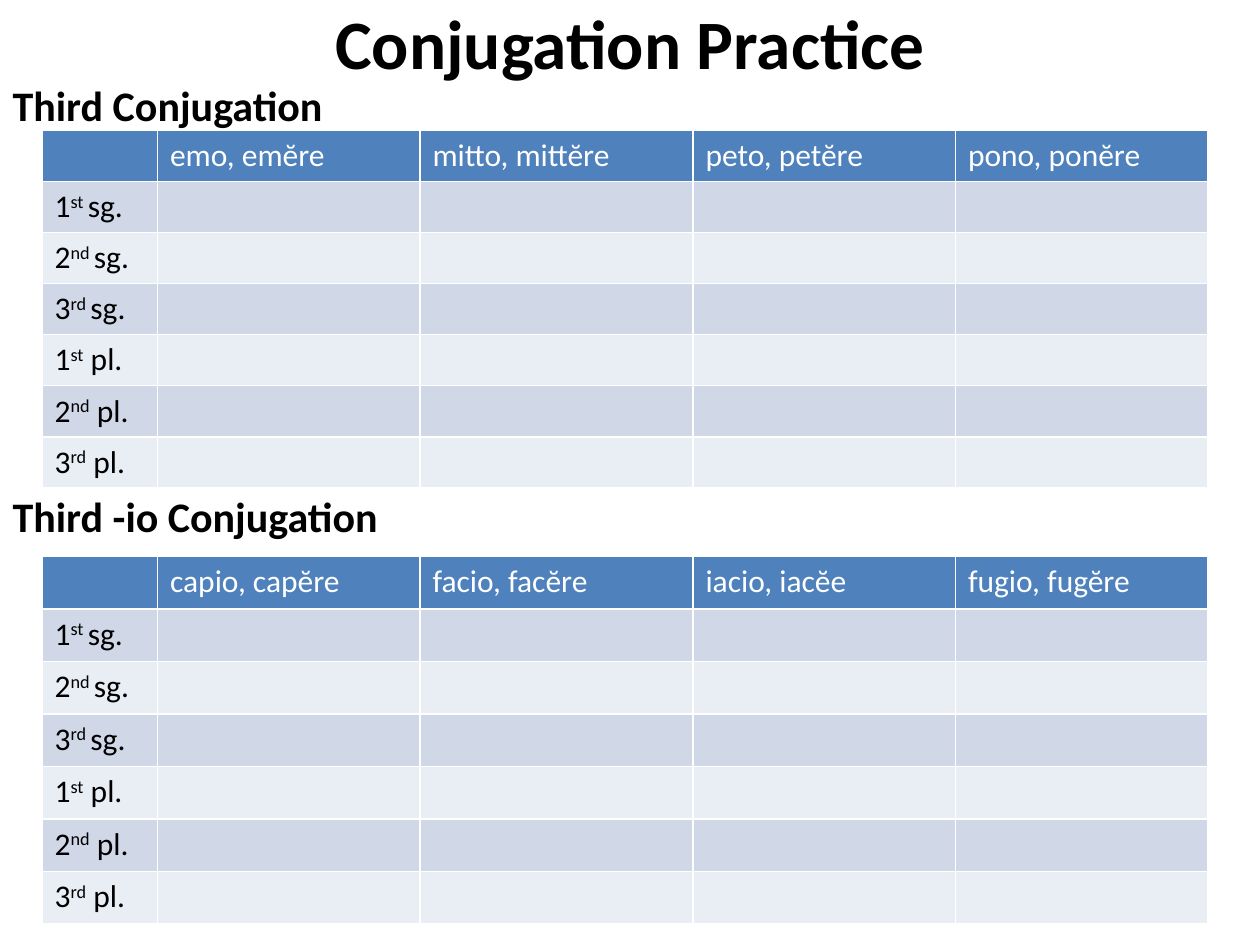
from lxml.etree import SubElement
from pptx import Presentation
from pptx.dml.color import RGBColor
from pptx.enum.text import MSO_ANCHOR, MSO_AUTO_SIZE, PP_ALIGN
from pptx.oxml.ns import qn
from pptx.util import Pt

PERSONS = [("1", "st ", "sg."), ("2", "nd ", "sg."), ("3", "rd ", "sg."),
           ("1", "st", " pl."), ("2", "nd", " pl."), ("3", "rd", " pl.")]
THIRD_VERBS = ["emo, emĕre", "mitto, mittĕre", "peto, petĕre", "pono, ponĕre"]
THIRD_IO_VERBS = ["capio, capĕre", "facio, facĕre", "iacio, iacĕe", "fugio, fugĕre"]
COLUMN_WIDTHS = [66, 150, 156, 150, 144]


def rgb(color):
    return RGBColor.from_string(color)


def add_text(paragraph, text, size=18, color="000000", bold=False, raised=False):
    run = paragraph.add_run()
    run.text = text
    run.font.name = "Calibri"
    run.font.size = Pt(size)
    run.font.bold = bold
    run.font.color.rgb = rgb(color)
    if raised:
        run._r.get_or_add_rPr().set("baseline", "30000")


class PracticeSlide:
    header_fill = "4F81BD"
    band_fills = ["D0D8E8", "E9EDF4"]
    line_color = "FFFFFF"

    def __init__(self, slide):
        self.slide = slide

    def place(self, placeholder, left, top, width, height):
        placeholder.left, placeholder.top = Pt(left), Pt(top)
        placeholder.width, placeholder.height = Pt(width), Pt(height)
        frame = placeholder.text_frame
        frame.word_wrap = True
        frame.auto_size = MSO_AUTO_SIZE.NONE
        return frame

    def title(self, text):
        frame = self.place(self.slide.shapes.title, 36, 0, 648, 48)
        frame.vertical_anchor = MSO_ANCHOR.MIDDLE
        heading = frame.paragraphs[0]
        heading.alignment = PP_ALIGN.CENTER
        add_text(heading, text, size=39.6, bold=True)

    def section_headings(self, headings, gap):
        """Stack the headings, leaving a gap between them for a table."""
        frame = self.place(self.slide.placeholders[1], 0, 42, 702, 498)
        for index, text in enumerate(headings):
            heading = frame.add_paragraph() if index else frame.paragraphs[0]
            heading.space_before = Pt(gap if index else 0)
            properties = heading._p.get_or_add_pPr()
            properties.set("marL", str(Pt(27)))
            properties.set("indent", str(Pt(-27)))
            SubElement(properties, qn("a:buNone"))
            add_text(heading, text, size=24, bold=True)

    def style_cell(self, cell, fill):
        properties = cell._tc.get_or_add_tcPr()
        for side in ("lnL", "lnR", "lnT", "lnB"):
            border = SubElement(properties, qn(f"a:{side}"), w=str(Pt(1)))
            line_fill = SubElement(border, qn("a:solidFill"))
            SubElement(line_fill, qn("a:srgbClr"), val=self.line_color)
        cell.fill.solid()
        cell.fill.fore_color.rgb = rgb(fill)

    def conjugation_table(self, verbs, top, row_height):
        row_count = len(PERSONS) + 1
        table = self.slide.shapes.add_table(
            row_count, len(COLUMN_WIDTHS), Pt(24), Pt(top),
            Pt(sum(COLUMN_WIDTHS)), Pt(row_height * row_count)).table
        for column, width in zip(table.columns, COLUMN_WIDTHS):
            column.width = Pt(width)
        for index, row in enumerate(table.rows):
            row.height = Pt(row_height)
            fill = self.band_fills[(index - 1) % 2] if index else self.header_fill
            for cell in row.cells:
                self.style_cell(cell, fill)
        for column, verb in enumerate(verbs, start=1):
            add_text(table.cell(0, column).text_frame.paragraphs[0], verb, color="FFFFFF")
        for row, (person, ordinal, number) in enumerate(PERSONS, start=1):
            label = table.cell(row, 0).text_frame.paragraphs[0]
            add_text(label, person)
            add_text(label, ordinal, raised=True)
            add_text(label, number)


def main():
    presentation = Presentation()
    presentation.slide_width, presentation.slide_height = Pt(720), Pt(540)
    practice = PracticeSlide(presentation.slides.add_slide(presentation.slide_layouts[1]))
    practice.title("Conjugation Practice")
    practice.section_headings(["Third Conjugation", "Third -io Conjugation"], gap=206)
    practice.conjugation_table(THIRD_VERBS, top=74.4, row_height=28.8)
    practice.conjugation_table(THIRD_IO_VERBS, top=318, row_height=30)
    presentation.save("out.pptx")


if __name__ == "__main__":
    main()
